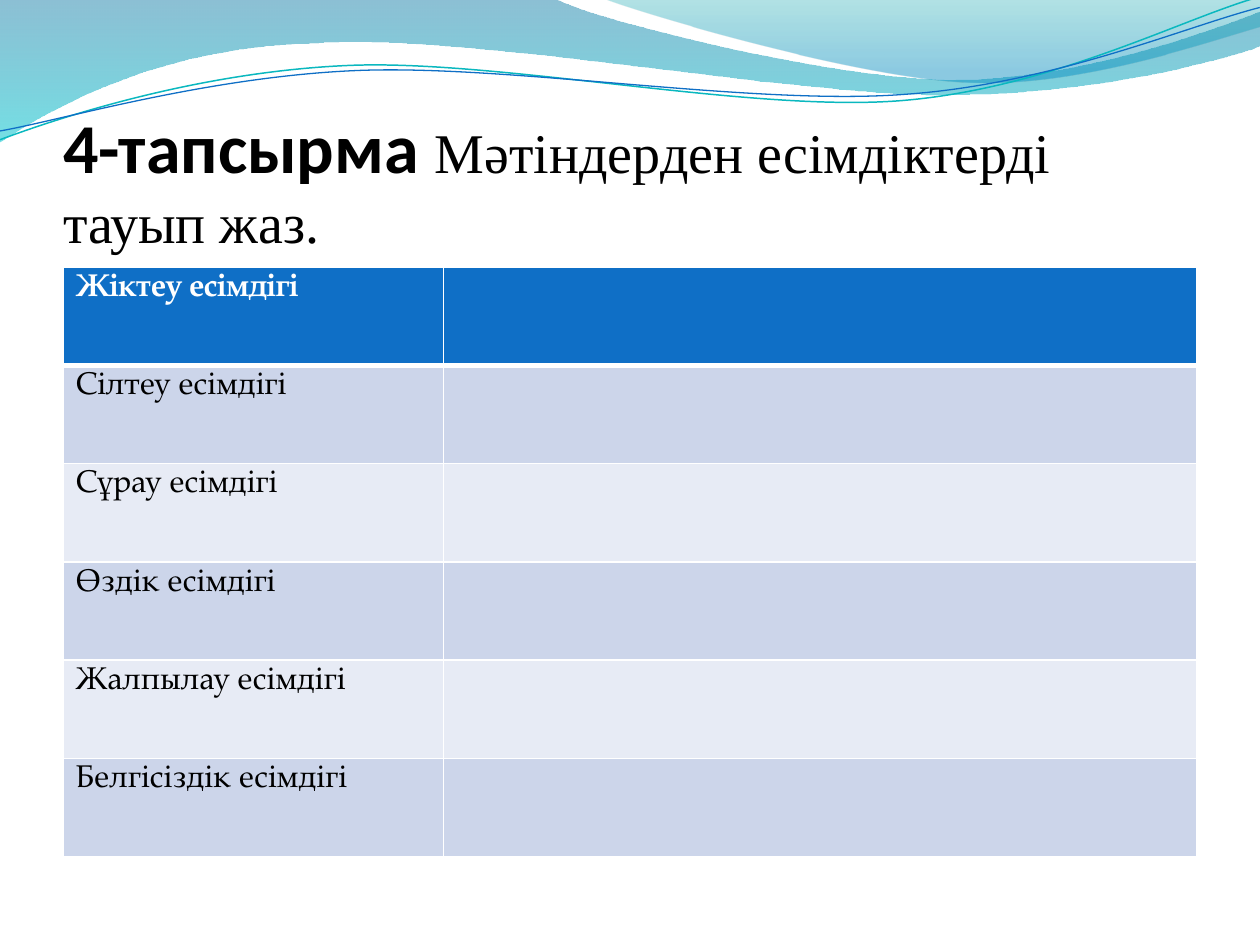
from dataclasses import dataclass
from math import cos, radians, sin

from lxml import etree
from pptx import Presentation
from pptx.dml.color import RGBColor
from pptx.enum.text import MSO_ANCHOR, MSO_AUTO_SIZE, PP_ALIGN
from pptx.oxml.ns import qn
from pptx.util import Inches, Pt

BOTTOM, LEFT, NO_FIT = MSO_ANCHOR.BOTTOM, PP_ALIGN.LEFT, MSO_AUTO_SIZE.NONE
TITLE_ONLY = 5
UNITS_PER_INCH = 1000
LINE_TILT = -2.7


@dataclass(frozen=True)
class Theme:
    ink: str = "000000"
    white: str = "FFFFFF"
    header: str = "0F6FC6"
    bands: tuple = ("CCD5EA", "E7EBF5")
    teal_line: str = "0AB8BF"
    # Gradient stops: position, colour, opacity in percent
    wide_wave: tuple = ((0, "0074A1", 45), (1, "00C6CF", 55))
    right_wave: tuple = ((0, "00A1A9", 30), (0.8, "008BBF", 45))
    number_font: str = "Calibri"
    task_font: str = "Times New Roman"
    table_font: str = "TeX Gyre Pagella"
    number_size: int = 40
    task_size: int = 32
    table_size: int = 18


def rgb(colour):
    return RGBColor.from_string(colour)


def add_run(paragraph, text, *, font, size, colour, bold=False):
    run = paragraph.add_run()
    run.text = text
    run.font.name, run.font.size, run.font.bold = font, Pt(size), bold
    run.font.color.rgb = rgb(colour)


def turn(point, centre, degrees):
    angle = radians(degrees)
    dx, dy = point[0] - centre[0], point[1] - centre[1]
    return (centre[0] + dx * cos(angle) - dy * sin(angle),
            centre[1] + dx * sin(angle) + dy * cos(angle))


class SlideBuilder:
    def __init__(self, slide, theme):
        self.slide, self.theme = slide, theme

    def outline(self, start, segments, close):
        """Draw segments of one point (line) or three points (cubic curve)."""
        points = [(round(x * UNITS_PER_INCH), round(y * UNITS_PER_INCH))
                  for x, y in [start, *(point for segment in segments for point in segment)]]
        builder = self.slide.shapes.build_freeform(
            *points[0], scale=Inches(1) / UNITS_PER_INCH)
        builder.add_line_segments(points[1:], close=close)
        shape = builder.convert_to_shape()
        shape.shadow.inherit = False
        steps = iter(list(shape._element.iter(qn("a:lnTo"))))
        for segment in segments:
            parts = [next(steps) for _ in segment]
            if len(parts) == 3:
                curve = etree.Element(qn("a:cubicBezTo"))
                parts[0].addprevious(curve)
                for part in parts:
                    curve.append(part[0])
                    part.getparent().remove(part)
        return shape

    def wave(self, start, segments, stops):
        shape = self.outline(start, segments, close=True)
        shape.line.fill.background()
        shape.fill.gradient()
        shape.fill.gradient_angle = 270
        for stop, (position, colour, _) in zip(shape.fill.gradient_stops, stops):
            stop.position, stop.color.rgb = position, rgb(colour)
        for element, (_, _, opacity) in zip(shape._element.spPr.iter(qn("a:srgbClr")), stops):
            etree.SubElement(element, qn("a:alpha"), val=str(opacity * 1000))

    def wave_line(self, start, segments, colour, width):
        """Draw an open curve in a tilted frame; the points are where they show."""
        end = segments[-1][-1]
        centre = ((start[0] + end[0]) / 2, (start[1] + end[1]) / 2)
        level = [[turn(point, centre, -LINE_TILT) for point in segment]
                 for segment in segments]
        shape = self.outline(turn(start, centre, -LINE_TILT), level, close=False)
        shape.rotation = LINE_TILT
        shape.fill.background()
        shape.line.color.rgb, shape.line.width = rgb(colour), Pt(width)

    def title(self, number, task, left, top, width, height):
        theme, title = self.theme, self.slide.shapes.title
        title.left, title.top, title.width, title.height = map(
            Inches, (left, top, width, height))
        frame = title.text_frame
        frame.word_wrap, frame.auto_size, frame.vertical_anchor = True, NO_FIT, BOTTOM
        frame.margin_left = frame.margin_right = frame.margin_bottom = 0
        frame.margin_top = Inches(0.05)
        paragraph = frame.paragraphs[0]
        paragraph.alignment = LEFT
        add_run(paragraph, number, font=theme.number_font, size=theme.number_size,
                colour=theme.ink, bold=True)
        add_run(paragraph, task, font=theme.task_font, size=theme.task_size,
                colour=theme.ink)
        # The waves lie behind the title
        self.slide.shapes._spTree.append(title._element)

    def cell_borders(self, cell, **widths):
        """Set border widths in points, keyed by side: L, R, T, B."""
        for side, width in widths.items():
            line = etree.SubElement(cell._tc.get_or_add_tcPr(), qn(f"a:ln{side}"),
                                    w=str(Pt(width)))
            fill = etree.SubElement(line, qn("a:solidFill"))
            etree.SubElement(fill, qn("a:srgbClr"), val=self.theme.white)

    def answer_table(self, labels, left, top, column_widths, row_height):
        """Add the table; its default style gives the body its white borders."""
        theme = self.theme
        table = self.slide.shapes.add_table(
            len(labels), len(column_widths), Inches(left), Inches(top),
            Inches(sum(column_widths)), Inches(row_height * len(labels))).table
        for column, width in zip(table.columns, column_widths):
            column.width = Inches(width)
        for index, label in enumerate(labels):
            is_header = index == 0
            for cell in table.rows[index].cells:
                if is_header:
                    self.cell_borders(cell, L=1, R=1, T=1, B=3)
                cell.fill.solid()
                cell.fill.fore_color.rgb = rgb(
                    theme.header if is_header else theme.bands[(index - 1) % 2])
            add_run(table.cell(index, 0).text_frame.paragraphs[0], label,
                    font=theme.table_font, size=theme.table_size, bold=is_header,
                    colour=theme.white if is_header else theme.ink)


def main():
    presentation = Presentation()
    presentation.slide_width, presentation.slide_height = Inches(10), Inches(7.5)
    theme = Theme()
    slide = presentation.slides.add_slide(presentation.slide_layouts[TITLE_ONLY])
    builder = SlideBuilder(slide, theme)

    builder.wave((0, 0), [
        [(4.4, -0.01)],
        [(4.76, 0.17), (6.64, 0.63), (7.58, 0.63)],
        [(8.53, 0.63), (9.58, 0.26), (10, 0.09)],
        [(10.01, 0.36)],
        [(9.83, 0.44), (8.7, 0.76), (7.46, 0.75)],
        [(6.22, 0.75), (3.82, 0.28), (2.57, 0.34)],
        [(1.29, 0.36), (0.46, 0.83), (-0.01, 1.13)],
    ], theme.wide_wave)
    builder.wave((4.79, -0.01), [
        [(5.09, 0.11), (6.82, 0.62), (7.69, 0.65)],
        [(8.56, 0.69), (9.61, 0.32), (10, 0.21)],
        [(10, 0)],
    ], theme.right_wave)
    builder.wave_line((0, 1.11), [
        [(0.48, 0.93), (1.58, 0.57), (2.77, 0.52)],
        [(3.95, 0.47), (5.93, 0.89), (7.13, 0.8)],
        [(8.33, 0.71), (9.38, 0.15), (9.98, -0.02)],
    ], theme.teal_line, 0.85)
    builder.wave_line((0, 1.04), [
        [(0.47, 0.96), (1.64, 0.61), (2.83, 0.56)],
        [(4.03, 0.51), (5.97, 0.84), (7.17, 0.75)],
        [(8.36, 0.67), (9.41, 0.21), (10, 0.06)],
    ], theme.header, 0.75)

    builder.title("4-тапсырма ", "Мәтіндерден есімдіктерді тауып жаз.",
                  0.5, 0.77, 9, 1.25)
    builder.answer_table(
        ["Жіктеу есімдігі", "Сілтеу есімдігі", "Сұрау есімдігі",
         "Өздік есімдігі", "Жалпылау есімдігі", "Белгісіздік есімдігі"],
        left=0.5, top=2.12, column_widths=(3.02, 5.98), row_height=0.78)
    presentation.save("out.pptx")


if __name__ == "__main__":
    main()
